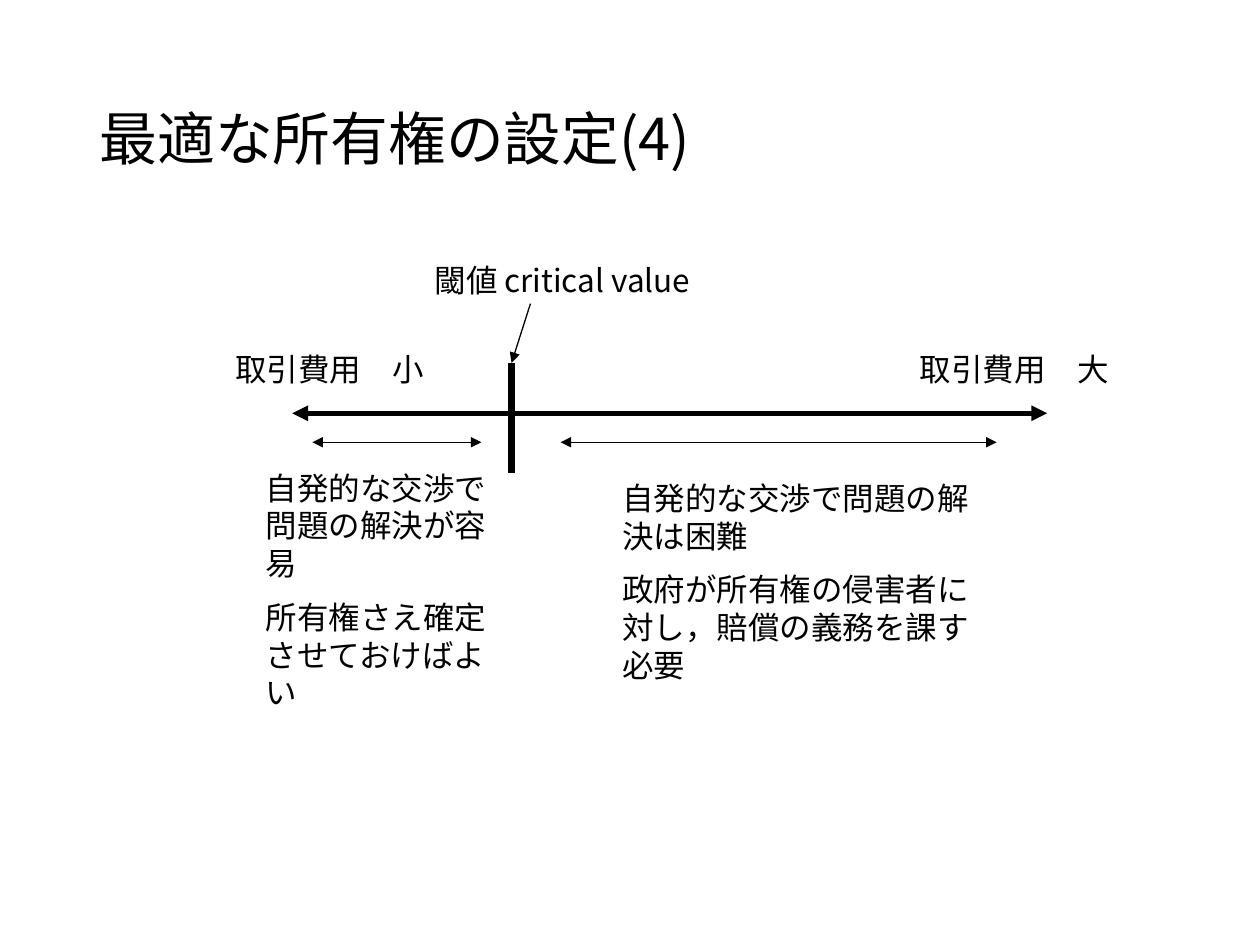
from lxml.etree import SubElement
from pptx import Presentation
from pptx.dml.color import RGBColor
from pptx.enum.shapes import MSO_CONNECTOR
from pptx.enum.text import MSO_ANCHOR, MSO_AUTO_SIZE, PP_ALIGN
from pptx.oxml.ns import qn
from pptx.util import Inches, Pt

FONT = "Noto Sans CJK JP"
BLACK = "000000"


def set_color(color_format, value):
    color_format.rgb = RGBColor.from_string(value)


def format_paragraph(p, size):
    p.alignment = PP_ALIGN.LEFT
    p.font.size = Pt(size)
    p.font.name = FONT
    p.font.fill.solid()
    set_color(p.font.fill.fore_color, BLACK)
    SubElement(p.font._element, qn("a:ea"), typeface=FONT)


def add_title(slide, text, left, top, width, height):
    title = slide.shapes.title
    title.left, title.top = Inches(left), Inches(top)
    title.width, title.height = Inches(width), Inches(height)
    tf = title.text_frame
    tf.text = text
    tf.auto_size = MSO_AUTO_SIZE.NONE
    tf.vertical_anchor = MSO_ANCHOR.MIDDLE
    p = tf.paragraphs[0]
    p.line_spacing = 0.9
    format_paragraph(p, 33)


def add_text(slide, left, top, width, height, *texts):
    box = slide.shapes.add_textbox(
        Inches(left), Inches(top), Inches(width), Inches(height))
    tf = box.text_frame
    tf.word_wrap = True
    for i, text in enumerate(texts):
        p = tf.add_paragraph() if i else tf.paragraphs[0]
        p.text = text
        if i:
            p.space_before = Pt(9)
        format_paragraph(p, 18)


def add_line(slide, x1, y1, x2, y2, width=0.75, ends=("headEnd", "tailEnd")):
    line = slide.shapes.add_connector(
        MSO_CONNECTOR.STRAIGHT, Inches(x1), Inches(y1), Inches(x2), Inches(y2))
    line.line.width = Pt(width)
    set_color(line.line.color, BLACK)
    for end in ends:
        SubElement(line.line._get_or_add_ln(), qn(f"a:{end}"), type="triangle")
    SubElement(line._element.spPr, qn("a:effectLst"))


def add_axis(slide, left, top, width, height):
    axis_y = top + 0.4
    threshold_x = left + 1.74
    range_y = top + 0.63
    add_line(slide, left, axis_y, left + width, axis_y, 3)
    add_line(slide, threshold_x, top, threshold_x, top + height, 4.5, ())
    add_line(slide, left + 0.16, range_y, left + 1.5, range_y)
    add_line(slide, left + 2.13, range_y, left + width - 0.4, range_y)
    add_text(slide, left - 0.55, top - 0.15, 1.89, 0.4, "取引費用　小")
    add_text(slide, left + 4.88, top - 0.15, 1.97, 0.4, "取引費用　大")
    add_text(slide, left + 1.03, top - 0.86, 2.28, 0.4, "閾値 critical value")
    add_line(slide, threshold_x + 0.15, top - 0.47, threshold_x, top,
             ends=("tailEnd",))


def add_outcomes(slide, left, top, width, height):
    add_text(slide, left, top, 1.97, height,
             "自発的な交渉で問題の解決が容易",
             "所有権さえ確定させておけばよい")
    add_text(slide, left + width - 3.07, top + 0.08, 3.07, 1.75,
             "自発的な交渉で問題の解決は困難",
             "政府が所有権の侵害者に対し，賠償の義務を課す必要")


def main():
    prs = Presentation()
    prs.slide_width, prs.slide_height = Inches(10), Inches(7.5)
    slide = prs.slides.add_slide(prs.slide_layouts[5])
    add_title(slide, "最適な所有権の設定(4)", 0.69, 0.4, 8.62, 1.45)
    add_axis(slide, 2.32, 2.88, 5.99, 0.87)
    add_outcomes(slide, 2.01, 3.67, 5.9, 2.05)
    prs.save("out.pptx")


if __name__ == "__main__":
    main()
